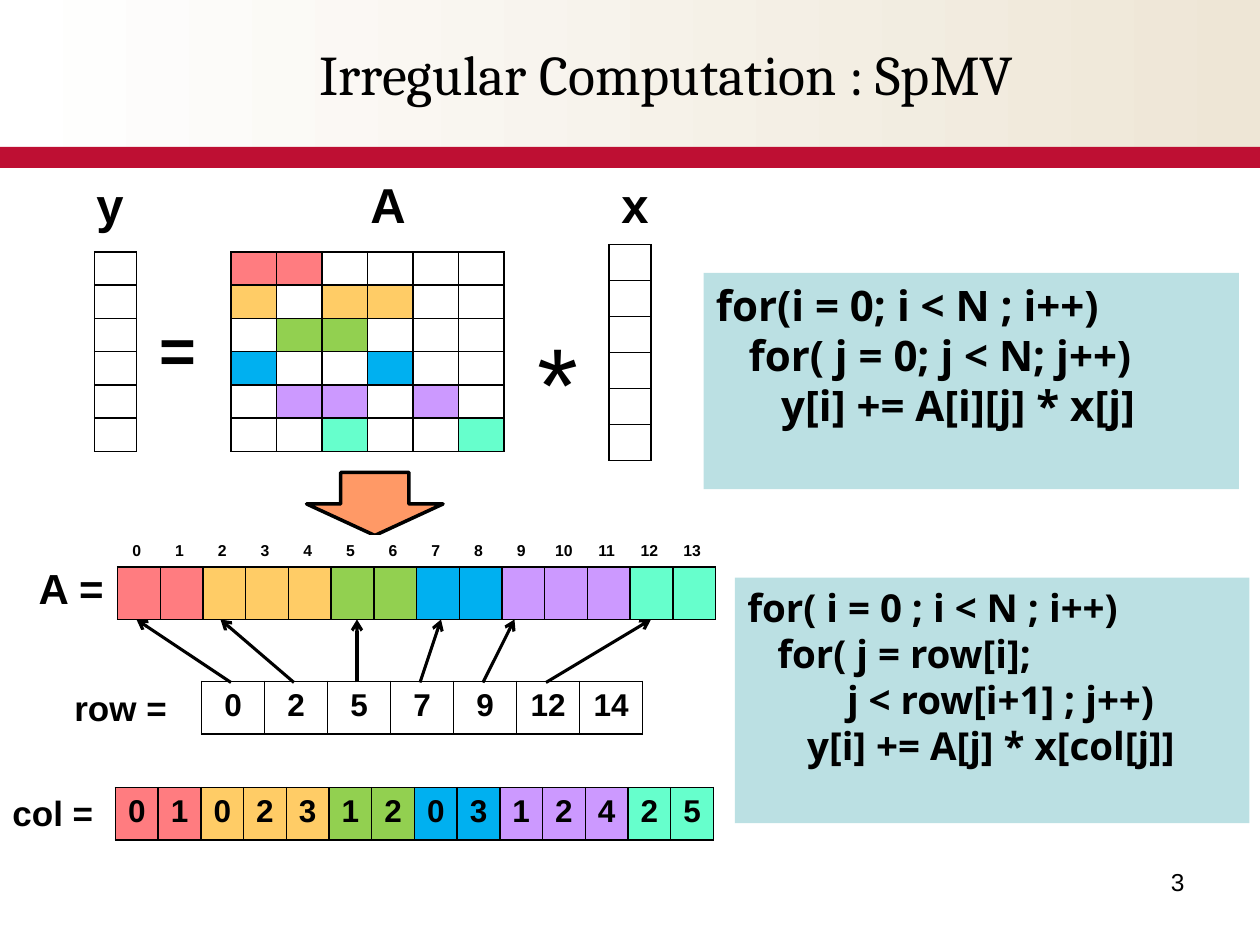
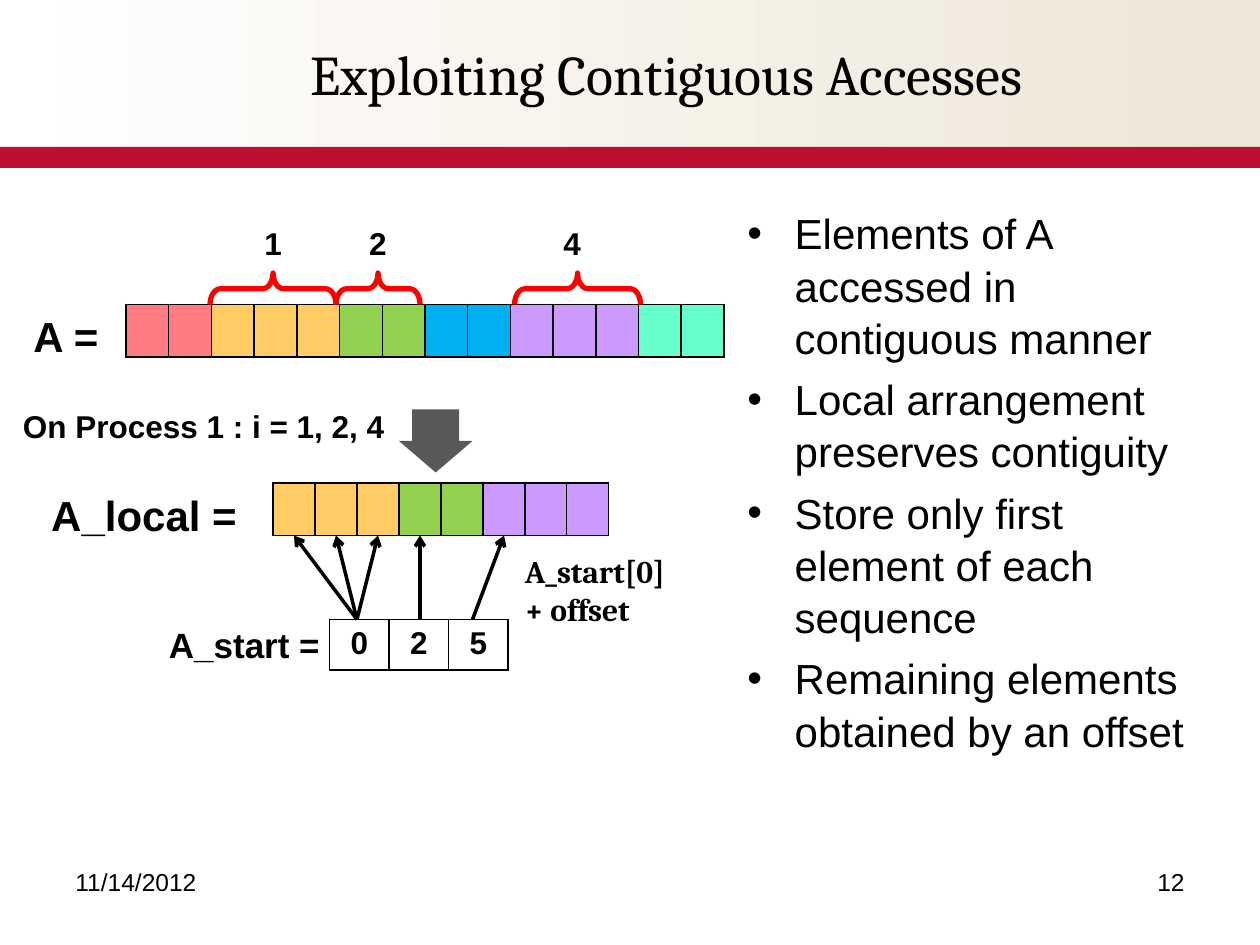
from itertools import accumulate

from lxml.etree import SubElement
from pptx import Presentation
from pptx.dml.color import RGBColor
from pptx.enum.shapes import MSO_CONNECTOR as CONNECTOR, MSO_SHAPE as SHAPE
from pptx.enum.text import MSO_ANCHOR as ANCHOR, MSO_AUTO_SIZE as AUTO_SIZE, PP_ALIGN as ALIGN
from pptx.oxml.ns import qn
from pptx.util import Emu, Pt

EMU_PER_PX = 7620  # 120 px to the inch
WIDTH, HEIGHT = 1200, 900

BLACK, WHITE = "000000", "FFFFFF"
CREAM, CRIMSON = "EEE6D6", "BE0F33"
CODE_FILL, BRACE_RED = "BBE0E3", "FF0000"

# Colour and column numbers of the nonzeros in each matrix row
MATRIX_ROWS = [
    ("FF7C80", [0, 1]),
    ("FFCC66", [0, 2, 3]),
    ("92D050", [1, 2]),
    ("00B0F0", [0, 3]),
    ("CC99FF", [1, 2, 4]),
    ("66FFCC", [2, 5]),
]
SIZE = len(MATRIX_ROWS)
ROW_STARTS = list(accumulate((len(cols) for _, cols in MATRIX_ROWS), initial=0))
LOCAL_ROWS = [1, 2, 4]


def px(length):
    return Emu(round(length * EMU_PER_PX))


def area(left, top, width, height):
    return [px(length) for length in (left, top, width, height)]


def color(code):
    return RGBColor.from_string(code)


def assign(target, values):
    for key, value in values.items():
        setattr(target, key, value)


def write(frame, lines, size, font="Arial", bold=False, align=ALIGN.LEFT):
    for number, line in enumerate(lines):
        paragraph = frame.paragraphs[0] if number == 0 else frame.add_paragraph()
        paragraph.alignment = align
        run = paragraph.add_run()
        run.text = line
        assign(run.font, {"name": font, "size": Pt(size), "bold": bold})
        run.font.color.rgb = color(BLACK)


def add_label(slide, box, *lines, size=24, wrap=False, bold=True, **style):
    frame = slide.shapes.add_textbox(*area(*box)).text_frame
    assign(frame, {"word_wrap": wrap, "auto_size": AUTO_SIZE.NONE})
    write(frame, lines, size, bold=bold, **style)
    return frame


def add_figure(slide, kind, box, fill=None, line=None, weight=1, adjustments=()):
    figure = slide.shapes.add_shape(kind, *area(*box))
    figure.shadow.inherit = False
    if fill:
        figure.fill.solid()
        figure.fill.fore_color.rgb = color(fill)
    else:
        figure.fill.background()
    if line:
        figure.line.color.rgb = color(line)
        figure.line.width = Pt(weight)
    else:
        figure.line.fill.background()
    for index, value in enumerate(adjustments):
        figure.adjustments[index] = value
    return figure


def add_arrow(slide, start, end, weight):
    ends = [px(length) for length in (*start, *end)]
    arrow = slide.shapes.add_connector(CONNECTOR.STRAIGHT, *ends)
    arrow.line.color.rgb = color(BLACK)
    arrow.line.width = Pt(weight)
    SubElement(arrow.line._get_or_add_ln(), qn("a:tailEnd"), type="arrow")
    SubElement(arrow._element.spPr, qn("a:effectLst"))


def outline(cell, code):
    properties = cell._tc.get_or_add_tcPr()
    for side in ("lnL", "lnR", "lnT", "lnB"):
        edge = SubElement(properties, qn(f"a:{side}"), w=str(Pt(1)))
        SubElement(SubElement(edge, qn("a:solidFill")), qn("a:srgbClr"), val=code)


def add_cells(slide, box, fills, texts=None, size=18, border=BLACK, widths=None):
    """Draw a table from rows of fills, with texts in its first row."""
    left, top, width, height = box
    columns = len(fills[0])
    table = slide.shapes.add_table(len(fills), columns, *area(*box)).table
    assign(table, {"first_row": False, "horz_banding": False})
    for row in table.rows:
        row.height = px(height / len(fills))
    for index, column in enumerate(table.columns):
        column.width = px(widths[index] if widths else width / columns)
    for r, row_fills in enumerate(fills):
        for c, fill in enumerate(row_fills):
            cell = table.cell(r, c)
            outline(cell, border)
            cell.fill.solid()
            cell.fill.fore_color.rgb = color(fill)
            pad = px(6 if texts else 0)
            assign(cell, {"margin_left": 0, "margin_right": 0,
                          "margin_top": pad, "margin_bottom": pad})
            if texts and texts[c] != "":
                write(cell.text_frame, [str(texts[c])], size, bold=True, align=ALIGN.CENTER)
            else:
                SubElement(cell.text_frame.paragraphs[0]._p, qn("a:endParaRPr"), sz="800")


def nonzero_fills(rows=range(SIZE)):
    return [MATRIX_ROWS[row][0] for row in rows for _ in MATRIX_ROWS[row][1]]


def decorate_layout(layout, slide):
    """Build the header on a slide and move it behind the layout's placeholders."""
    header = add_figure(slide, SHAPE.RECTANGLE, (0, 0, WIDTH, 140), WHITE)
    header.fill.gradient()
    header.fill.gradient_angle = 0
    for stop, code in zip(header.fill.gradient_stops, (WHITE, CREAM)):
        stop.color.rgb = color(code)
    band = add_figure(slide, SHAPE.RECTANGLE, (0, 140, WIDTH, 20), CRIMSON)
    for position, part in enumerate((header, band), 2):
        layout.shapes._spTree.insert(position, part._element)


def add_titled_slide(deck, title, number, date=None):
    slide = deck.slides.add_slide(deck.slide_layouts[5])
    heading = slide.shapes.title
    assign(heading, dict(zip(("left", "top", "width", "height"), area(130, 30, 1010, 80))))
    assign(heading.text_frame, {"vertical_anchor": ANCHOR.MIDDLE, "word_wrap": True,
                                "auto_size": AUTO_SIZE.NONE})
    write(heading.text_frame, [title], 32, "Cambria", align=ALIGN.CENTER)
    footer = {"size": 14, "bold": False, "wrap": True}
    if date:
        add_label(slide, (60, 820, 280, 62), date, **footer)
    add_label(slide, (860, 820, 280, 62), number, align=ALIGN.RIGHT, **footer)
    return slide


def dense_product(slide, left, top):
    def at(x, y, width, height):
        return left + x, top + y, width, height

    vector = [[WHITE]] * SIZE
    matrix = [[fill if col in cols else WHITE for col in range(SIZE)]
              for fill, cols in MATRIX_ROWS]
    add_cells(slide, at(10, 80, 40, 190), vector)
    add_cells(slide, at(140, 80, 260, 190), matrix)
    add_cells(slide, at(500, 73, 40, 206), vector)
    for name, x, width in (("y", 0, 50), ("A", 261, 59), ("x", 500, 50)):
        add_label(slide, at(x, 0, width, 68), name, size=28)
    add_label(slide, at(60, 130, 60, 85), "=", size=36)
    add_label(slide, at(420, 136, 64, 133), "*", size=60, bold=False)


def compressed_arrays(slide, left, top):
    def at(x, y, width, height):
        return left + x, top + y, width, height

    fills = nonzero_fills()
    indices = range(len(fills))
    columns = [col for _, cols in MATRIX_ROWS for col in cols]
    add_cells(slide, at(110, 0, 570, 29), [[WHITE] * len(fills)], indices, 9, WHITE)
    add_cells(slide, at(112, 30, 570, 50), [fills])
    add_cells(slide, at(192, 139, 420, 50), [[WHITE] * len(ROW_STARTS)], ROW_STARTS)
    add_cells(slide, at(110, 240, 570, 50), [fills], columns)
    for row, target in enumerate((130, 210, 340, 420, 490, 620)):
        add_arrow(slide, (left + 220 + 60 * row, top + 140), (left + target, top + 80), 1.75)
    add_label(slide, at(25, 20, 86, 60), "A =")
    add_label(slide, at(59, 138, 113, 53), "row =", size=20)
    add_label(slide, at(0, 238, 102, 53), "col =", size=20)


def code_panel(slide, box, lines, size):
    panel = add_figure(slide, SHAPE.RECTANGLE, box, CODE_FILL)
    assign(panel.text_frame, {"word_wrap": True, "vertical_anchor": ANCHOR.TOP})
    write(panel.text_frame, lines, size, "Open Sans", bold=True)


def contiguous_runs(slide, left, top):
    """Show A with a brace over each row held by process 1."""
    labels = ["", 1, 2, "", 4, ""]
    add_cells(slide, (left + 120, top, 570, 49), [[WHITE] * SIZE], labels,
              border=WHITE, widths=[80, 120, 80, 80, 130, 80])
    add_cells(slide, (left + 120, top + 80, 570, 50), [nonzero_fills()])
    depth = 30
    for start, span in ((200, 120), (320, 80), (490, 120)):
        x = left + start + (span - depth) / 2
        y = top + 50 + (depth - span) / 2
        brace = add_figure(slide, SHAPE.LEFT_BRACE, (x, y, depth, span),
                           line=BRACE_RED, weight=3, adjustments=(0.33, 0.5))
        brace.rotation = 90
    add_label(slide, (left + 20, top + 80, 86, 60), "A =")


def local_arrays(slide, left, top):
    def at(x, y, width, height):
        return left + x, top + y, width, height

    add_label(slide, at(10, 0, 380, 48), "On Process 1 : i = 1, 2, 4", size=18)
    add_figure(slide, SHAPE.DOWN_ARROW, at(380, 8, 70, 60), "595959", adjustments=(0.64, 0.5))
    add_label(slide, at(37, 78, 203, 60), "A_local =")
    add_cells(slide, at(260, 78, 320, 50), [nonzero_fills(LOCAL_ROWS)])
    add_cells(slide, at(314, 208, 170, 48), [[WHITE] * 3], [0, 2, 5])
    add_label(slide, at(149, 206, 177, 53), "A_start =", size=20)
    for start, target in ((340, 280), (340, 320), (340, 360), (400, 400), (450, 480)):
        add_arrow(slide, (left + start, top + 208), (left + target, top + 128), 2)
    add_label(slide, at(488, 138, 198, 85), "A_start[0]", "+ offset", size=18, font="Cambria")


def bullet_list(slide, box, points):
    frame = add_label(slide, box, *points, wrap=True, bold=False)
    for number, paragraph in enumerate(frame.paragraphs):
        properties = paragraph._p.get_or_add_pPr()
        assign(paragraph, {"line_spacing": 1.04, "space_before": Pt(5 if number else 0)})
        indent = px(45)
        properties.set("marL", str(indent))
        properties.set("indent", str(-indent))
        SubElement(properties, qn("a:buFont"), typeface="Arial")
        SubElement(properties, qn("a:buChar"), char="•")


def spmv_slide(deck):
    slide = add_titled_slide(deck, "Irregular Computation : SpMV", "3")
    decorate_layout(slide.slide_layout, slide)
    dense_product(slide, 80, 160)
    add_figure(slide, SHAPE.DOWN_ARROW, (292, 450, 130, 60), "FF9966", BLACK, 2)
    compressed_arrays(slide, 0, 510)
    code_panel(slide, (670, 260, 510, 206), [
        "for(i = 0; i < N ; i++)",
        "   for( j = 0; j < N; j++)",
        "      y[i] += A[i][j] * x[j]",
    ], 24)
    code_panel(slide, (700, 550, 490, 234), [
        "for( i = 0 ; i < N ; i++)",
        "   for( j = row[i];",
        "          j < row[i+1] ; j++)",
        "      y[i] += A[j] * x[col[j]]",
    ], 22)


def contiguous_slide(deck):
    slide = add_titled_slide(deck, "Exploiting Contiguous Accesses", "12", "11/14/2012")
    bullet_list(slide, (700, 190, 440, 614), [
        "Elements of A accessed in contiguous manner",
        "Local arrangement preserves contiguity",
        "Store only first element of each sequence",
        "Remaining elements obtained by an offset",
    ])
    contiguous_runs(slide, 0, 210)
    local_arrays(slide, 0, 382)


def main():
    deck = Presentation()
    assign(deck, {"slide_width": px(WIDTH), "slide_height": px(HEIGHT)})
    spmv_slide(deck)
    contiguous_slide(deck)
    deck.save("out.pptx")


if __name__ == "__main__":
    main()
